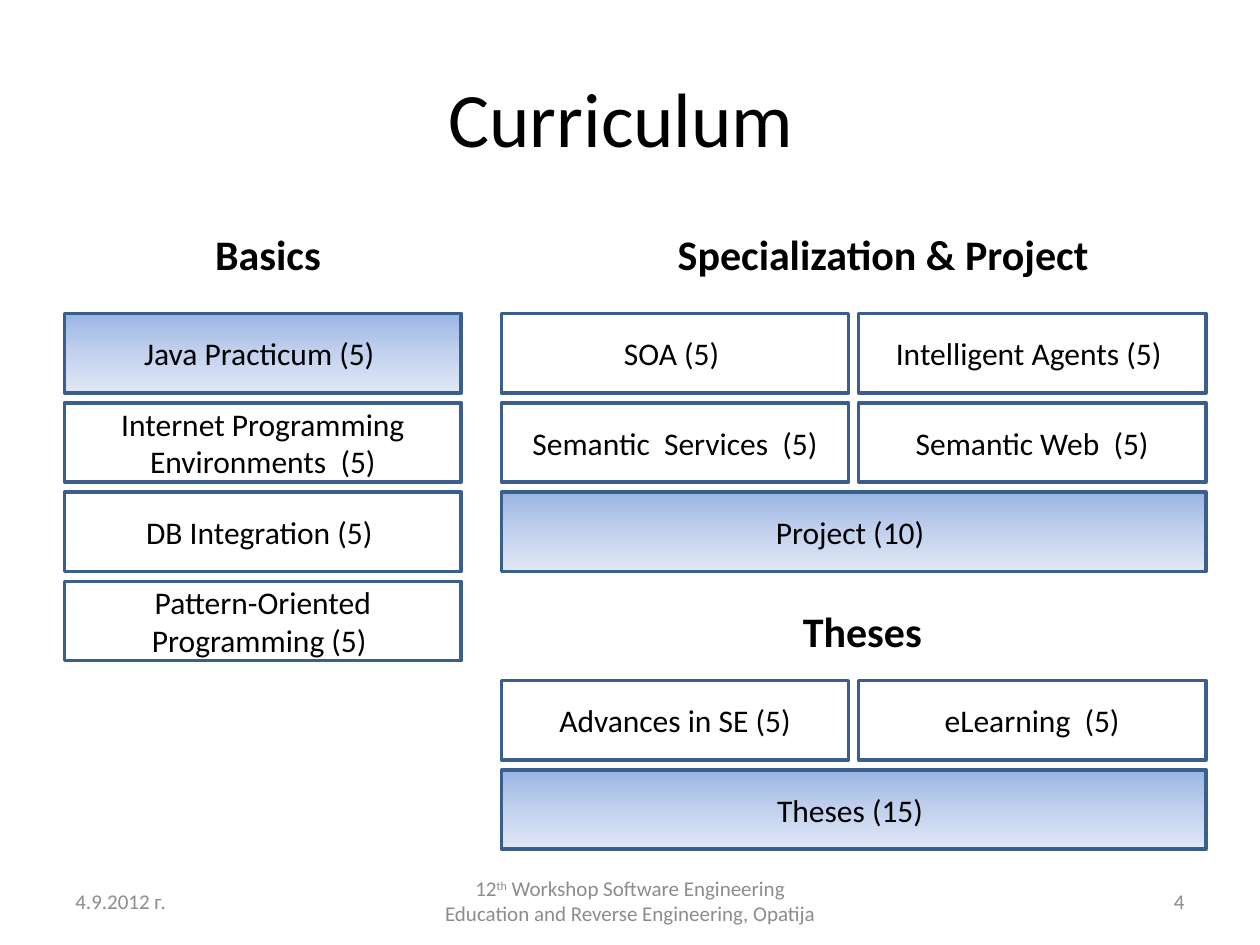
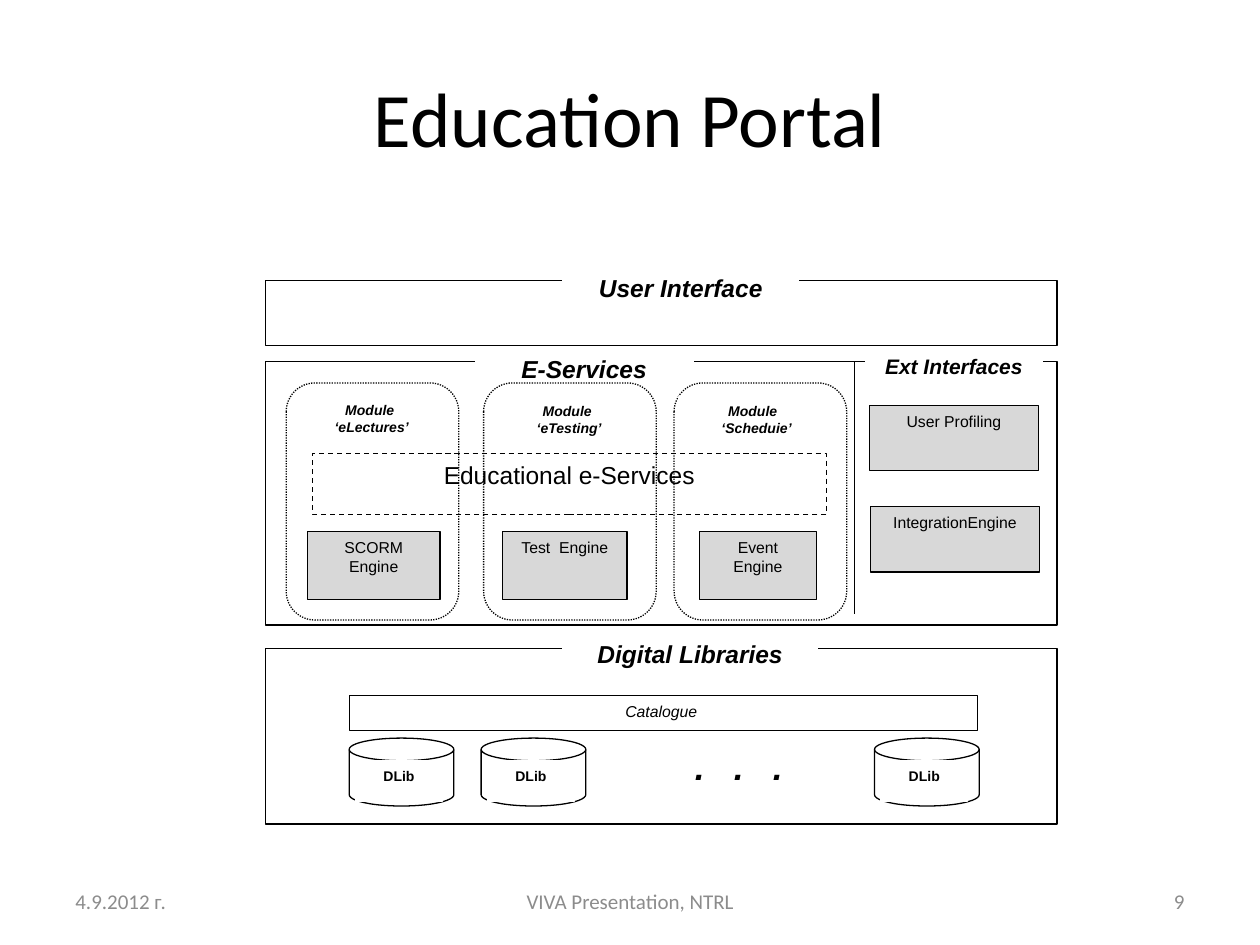
from copy import deepcopy
from dataclasses import dataclass
from typing import NamedTuple

from pptx import Presentation
from pptx.dml.color import RGBColor
from pptx.enum.dml import MSO_LINE
from pptx.enum.shapes import MSO_CONNECTOR, MSO_SHAPE
from pptx.enum.text import MSO_ANCHOR, PP_ALIGN
from pptx.oxml.ns import qn
from pptx.util import Cm, Pt

RECT, ROUND = MSO_SHAPE.RECTANGLE, MSO_SHAPE.ROUNDED_RECTANGLE
DISK = MSO_SHAPE.FLOWCHART_MAGNETIC_DISK
DASH, DOT = MSO_LINE.DASH, MSO_LINE.ROUND_DOT
STRAIGHT = MSO_CONNECTOR.STRAIGHT
TOP, MIDDLE = MSO_ANCHOR.TOP, MSO_ANCHOR.MIDDLE
LEFT, CENTER, RIGHT = PP_ALIGN.LEFT, PP_ALIGN.CENTER, PP_ALIGN.RIGHT

BLACK, WHITE, GREY, MUTED, BLUE = "000000", "FFFFFF", "D8D8D8", "8C8C8C", "3A5F8C"
SHADE = ("9AB5E4", "C2D1ED", "E1E8F5")
TITLE_ONLY = 5
DATE = "4.9.2012 г."


class Area(NamedTuple):
    """Left, top, width and height in centimetres."""
    left: float
    top: float
    width: float
    height: float

    def lengths(self) -> list:
        return [Cm(n) for n in self]


class Run(NamedTuple):
    text: str
    raised: bool = False


@dataclass(frozen=True)
class Type:
    size: float
    font: str = "Arial"
    bold: bool = False
    italic: bool = False
    color: str = BLACK
    anchor: MSO_ANCHOR = TOP
    align: PP_ALIGN = CENTER
    gap: int = 0  # letter spacing in hundredths of a point


@dataclass(frozen=True)
class Look:
    fill: str | tuple | None = WHITE
    line: str | None = BLACK
    width: float = 0.75
    dash: MSO_LINE | None = None
    form: MSO_SHAPE = RECT


HEAD = Type(44, "Calibri", anchor=MIDDLE)
COURSE = Type(18, "Calibri", anchor=MIDDLE)
GROUP = Type(24, "Calibri", bold=True, anchor=MIDDLE)
LAYER = Type(14, bold=True, italic=True)
SIDE = Type(12, bold=True, italic=True)
MODULE = Type(8, bold=True, italic=True)
STORE = Type(8, bold=True)
PART = Type(9)
INDEX = Type(9, italic=True)
SHARED = Type(14)
DOTS = Type(20, bold=True, italic=True, gap=560)

OPEN = Look(None, BLUE, 2)
CORE = Look(SHADE, BLUE, 2)
PLAIN = Look(line=None)
FRAME = Look()
LABEL = Look(line=WHITE)
ENGINE = Look(GREY)
DASHED = Look(dash=DASH)
DOTTED = Look(None, dash=DOT, form=ROUND)
DRUM = Look(form=DISK)


def rgb(color: str) -> RGBColor:
    return RGBColor.from_string(color)


def write(frame, text: str | list[Run], kind: Type) -> None:
    """Fill a text frame, one paragraph per line of text."""
    frame.word_wrap = True
    frame.vertical_anchor = kind.anchor
    lines = [[Run(t)] for t in text.split("\n")] if isinstance(text, str) else [text]
    for i, runs in enumerate(lines):
        para = frame.add_paragraph() if i else frame.paragraphs[0]
        para.alignment = kind.align
        for part in runs:
            run = para.add_run()
            run.text = part.text
            font = run.font
            font.name, font.size = kind.font, Pt(kind.size)
            font.bold, font.italic = kind.bold, kind.italic
            font.color.rgb = rgb(kind.color)
            props = run._r.get_or_add_rPr()
            if part.raised:
                props.set("baseline", "30000")
            if kind.gap:
                props.set("spc", str(kind.gap))


def shade(shape, colors: tuple) -> None:
    """Fill from top to bottom with three evenly spaced colours."""
    shape.fill.gradient()
    shape.fill.gradient_angle = 270
    stops = shape._element.spPr.find(".//" + qn("a:gsLst"))
    stops.insert(1, deepcopy(stops[0]))
    stops[1].set("pos", "50000")
    for stop, color in zip(shape.fill.gradient_stops, colors):
        stop.color.rgb = rgb(color)


def box(slide, area: Area, look: Look, text: str = "", kind: Type = PART) -> None:
    shape = slide.shapes.add_shape(look.form, *area.lengths())
    shape.shadow.inherit = False
    if look.fill is None:
        shape.fill.background()
    elif isinstance(look.fill, tuple):
        shade(shape, look.fill)
    else:
        shape.fill.solid()
        shape.fill.fore_color.rgb = rgb(look.fill)
    if look.line is None:
        shape.line.fill.background()
    else:
        shape.line.color.rgb = rgb(look.line)
        shape.line.width = Pt(look.width)
        if look.dash is not None:
            shape.line.dash_style = look.dash
    if text:
        write(shape.text_frame, text, kind)


def rule(slide, left: float, top: float, end: float) -> None:
    """Draw an upright line."""
    line = slide.shapes.add_connector(STRAIGHT, Cm(left), Cm(top), Cm(left), Cm(end))
    line.line.color.rgb = rgb(BLACK)
    line.line.width = Pt(0.75)
    props = line._element.spPr
    props.append(props.makeelement(qn("a:effectLst"), {}))


def start(deck, title: str, note: str | list[Run], number: int):
    """Add a slide with its title and footer."""
    slide = deck.slides.add_slide(deck.slide_layouts[TITLE_ONLY])
    head = slide.shapes.title
    head.left, head.top, head.width, head.height = Area(1.27, 0.76, 22.86, 3.18).lengths()
    write(head.text_frame, title, HEAD)
    for left, width, text, align in (
        (1.27, 5.93, DATE, LEFT),
        (18.2, 5.93, str(number), RIGHT),
        (8.68, 8.05, note, CENTER),
    ):
        foot = slide.shapes.add_textbox(*Area(left, 17.65, width, 1.02).lengths())
        write(foot.text_frame, text,
              Type(12, "Calibri", color=MUTED, anchor=MIDDLE, align=align))
    return slide


def courses(deck) -> None:
    note = [Run("12"), Run("th", True),
            Run(" Workshop Software Engineering Education and Reverse Engineering, Opatija")]
    slide = start(deck, "Curriculum ", note, 4)
    high, gap, half = 1.6, 0.2, 7.0
    basic, special = 1.3, 10.11
    first, last = 6.32, 13.72

    def stack(left: float, top: float, width: float, rows: list) -> None:
        """Draw rows of courses; a course alone in its row spans the width."""
        for i, row in enumerate(rows):
            wide = (width - gap * (len(row) - 1)) / len(row)
            for j, (text, look) in enumerate(row):
                area = Area(left + j * (wide + gap), top + i * (high + gap), wide, high)
                box(slide, area, look, text, COURSE)

    stack(basic, first, 8.0, [
        [("Java Practicum (5) ", CORE)],
        [("Internet Programming Environments  (5)", OPEN)],
        [("DB Integration (5) ", OPEN)],
        [("Pattern-Oriented Programming (5) ", OPEN)],
    ])
    full = 2 * half + gap
    stack(special, first, full, [
        [("SOA (5) ", OPEN), ("Intelligent Agents (5) ", OPEN)],
        [("Semantic  Services  (5)", OPEN), ("Semantic Web  (5)", OPEN)],
        [("Project (10) ", CORE)],
    ])
    stack(special, last, full, [
        [("Advances in SE (5)", OPEN), ("eLearning  (5)", OPEN)],
        [("Theses (15) ", CORE)],
    ])
    for left, top, width, text in (
        (2.9, 4.32, 5.2, "Basics "),
        (11.71, 4.32, 12.19, "Specialization & Project"),
        (13.69, 11.91, 7.39, "Theses"),
    ):
        box(slide, Area(left, top, width, high), PLAIN, text, GROUP)


def portal(deck) -> None:
    slide = start(deck, "Education Portal", "VIVA Presentation, NTRL", 9)
    for top, height in ((5.66, 1.3), (7.29, 5.31), (13.08, 3.53)):
        box(slide, Area(5.36, top, 15.95, height), FRAME)
    for area, text in (
        (Area(11.35, 5.38, 4.75, 1.35), "User Interface"),
        (Area(9.58, 7.01, 4.39, 0.61), "E-Services"),
        (Area(11.35, 12.75, 5.13, 0.66), "Digital Libraries"),
    ):
        box(slide, area, LABEL, text, LAYER)

    for area, text in (
        (Area(6.2, 10.72, 2.67, 1.37), "SCORM Engine"),
        (Area(10.13, 10.72, 2.51, 1.37), "Test  Engine"),
        (Area(14.1, 10.72, 2.36, 1.37), "Event Engine"),
        (Area(17.53, 8.18, 3.4, 1.3), "User Profiling"),
        (Area(17.55, 10.21, 3.4, 1.32), "IntegrationEngine"),
    ):
        box(slide, area, ENGINE, text)
    box(slide, Area(6.3, 9.14, 10.36, 1.24), DASHED, "Educational e-Services", SHARED)

    for left, inset, top, text in (
        (5.77, 0.2, 7.98, "Module  ‘eLectures’"),
        (9.75, 0.2, 8.0, "Module \n‘eTesting’"),
        (13.59, 0.1, 8.0, "Module \n ‘Scheduie’"),
    ):
        box(slide, Area(left, 7.72, 3.48, 4.78), DOTTED)
        box(slide, Area(left + inset, top, 3.05, 1.04), LABEL, text, MODULE)

    rule(slide, 17.22, 7.29, 12.37)
    box(slide, Area(17.45, 7.01, 3.56, 0.71), LABEL, "Ext Interfaces", SIDE)

    for left in (7.04, 9.7, 17.63):
        box(slide, Area(left, 14.88, 2.11, 1.37), DRUM)
        box(slide, Area(left + 0.13, 15.34, 1.75, 0.81), LABEL, "DLib", STORE)
    box(slide, Area(7.04, 14.02, 12.67, 0.71), FRAME, "Catalogue ", INDEX)
    box(slide, Area(13.08, 14.91, 3.63, 1.17), LABEL, ". . .", DOTS)


def main() -> None:
    deck = Presentation()
    deck.slide_width, deck.slide_height = Cm(25.4), Cm(19.05)
    courses(deck)
    portal(deck)
    deck.save("out.pptx")


if __name__ == "__main__":
    main()
